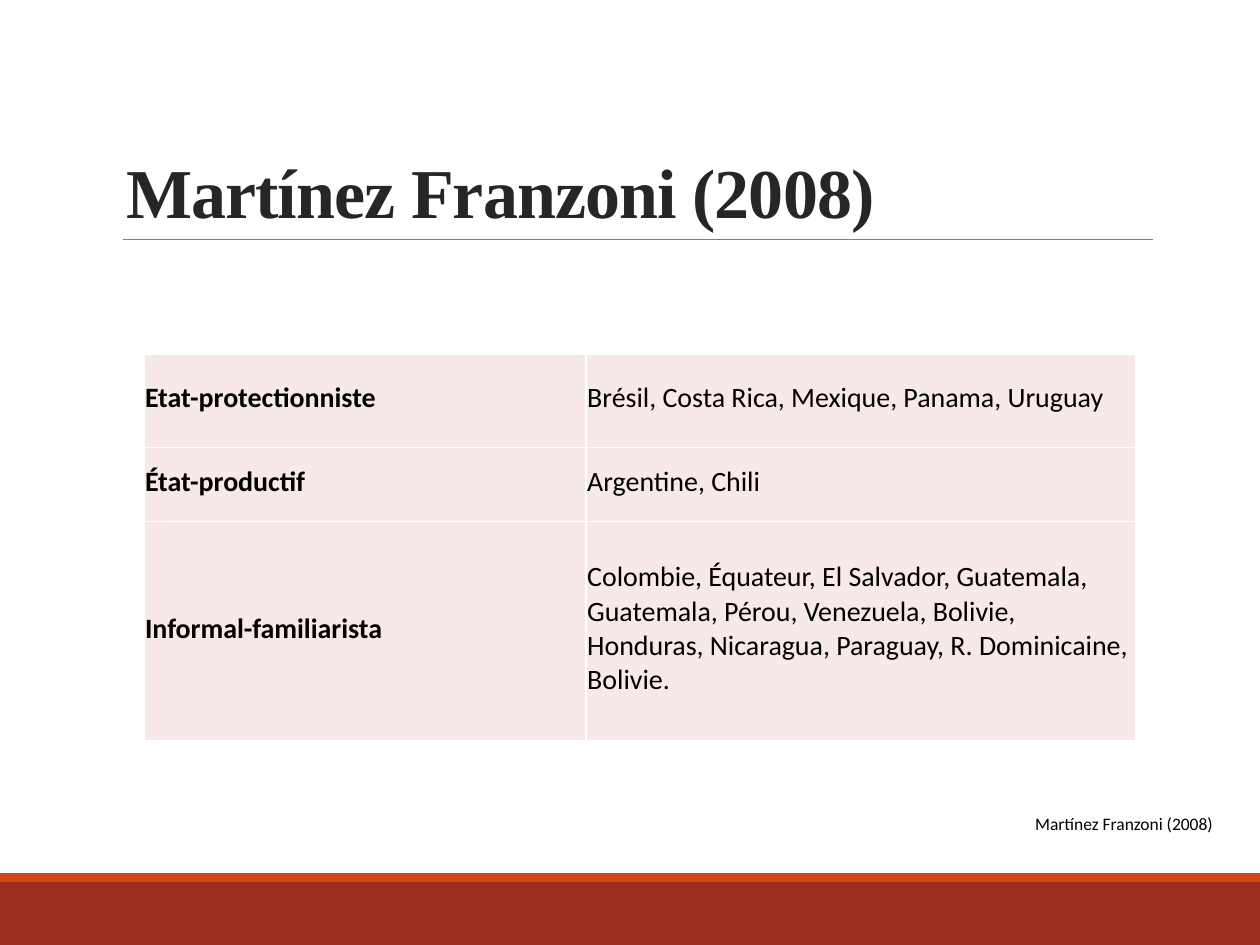
import pptx
import pptx.dml.color
import pptx.enum.shapes
import pptx.enum.text
import pptx.oxml
import pptx.oxml.ns
import pptx.util

Pt = pptx.util.Pt
ANCHOR = pptx.enum.text.MSO_ANCHOR
ALIGN = pptx.enum.text.PP_ALIGN
SHAPES = pptx.enum.shapes

TITLE = "Martínez Franzoni (2008)"
SOURCE = "Martínez Franzoni (2008)"
REGIMES = [
    ("Etat-protectionniste", "Brésil, Costa Rica, Mexique, Panama, Uruguay"),
    ("État-productif", "Argentine, Chili"),
    ("Informal-familiarista",
     "Colombie, Équateur, El Salvador, Guatemala, Guatemala, Pérou, Venezuela, "
     "Bolivie, Honduras, Nicaragua, Paraguay, R. Dominicaine, Bolivie."),
]
BANDS = [(504, 36, "9B2D1F"), (499, 5, "D34817")]
COL_WIDTHS = [252.7, 313.9]
ROW_HEIGHTS = [53.3, 42.5, 125.3]
SLIDE_W, SLIDE_H = 720, 540


def color(hex_code):
    return pptx.dml.color.RGBColor.from_string(hex_code)


def box(left, top, width, height):
    return Pt(left), Pt(top), Pt(width), Pt(height)


def style_text(tf, font, size, hex_code, bold=False):
    for p in tf.paragraphs:
        for r in p.runs:
            r.font.name = font
            r.font.size = Pt(size)
            r.font.bold = bold
            r.font.color.rgb = color(hex_code)


def set_borders(cell, hex_code, width):
    tc_pr = cell._tc.get_or_add_tcPr()
    for i, side in enumerate(("lnL", "lnR", "lnT", "lnB")):
        tc_pr.insert(i, pptx.oxml.parse_xml(
            f'<a:{side} {pptx.oxml.ns.nsdecls("a")} w="{Pt(width)}"><a:solidFill>'
            f'<a:srgbClr val="{hex_code}"/></a:solidFill></a:{side}>'))


def add_bands(s):
    for top, height, fill in BANDS:
        sp = s.shapes.add_shape(SHAPES.MSO_SHAPE.RECTANGLE, *box(0, top, SLIDE_W, height))
        sp.shadow.inherit = False
        sp.fill.solid()
        sp.fill.fore_color.rgb = color(fill)
        sp.line.fill.background()


def add_rule(s):
    rule = s.shapes.add_connector(
        SHAPES.MSO_CONNECTOR.STRAIGHT, Pt(70.5), Pt(136.8), Pt(658.8), Pt(136.8))
    rule.line.color.rgb = color("808080")
    rule.line.width = Pt(0.5)
    rule._element.spPr.append(
        pptx.oxml.parse_xml(f'<a:effectLst {pptx.oxml.ns.nsdecls("a")}/>'))


def format_title(s):
    title = s.shapes.title
    title.left, title.top, title.width, title.height = box(64.8, 22.3, 594, 114.5)
    tf = title.text_frame
    tf.text = TITLE
    tf.word_wrap = True
    tf.vertical_anchor = ANCHOR.BOTTOM
    p = tf.paragraphs[0]
    p.alignment = ALIGN.LEFT
    p.line_spacing = 0.85
    style_text(tf, "Times New Roman", 40, "262626", True)
    p.runs[0].font._element.set("spc", "-50")


def add_regimes(s):
    frame = s.shapes.add_table(
        len(REGIMES), len(COL_WIDTHS),
        *box(82.2, 202.3, sum(COL_WIDTHS), sum(ROW_HEIGHTS)))
    table = frame.table
    table.first_row = table.horz_banding = False
    for column, width in zip(table.columns, COL_WIDTHS):
        column.width = Pt(width)
    for row, height, texts in zip(table.rows, ROW_HEIGHTS, REGIMES):
        row.height = Pt(height)
        for i, (cell, text) in enumerate(zip(row.cells, texts)):
            cell.text_frame.text = text
            style_text(cell.text_frame, "Calibri", 16, "000000", i == 0)
            cell.vertical_anchor = ANCHOR.MIDDLE
            cell.margin_left = cell.margin_right = cell.margin_top = Pt(0.7)
            cell.margin_bottom = Pt(3.6)
            cell.fill.solid()
            cell.fill.fore_color.rgb = color("F7E9E8")
            set_borders(cell, "FFFFFF", 1)


def add_source(s):
    tf = s.shapes.add_textbox(*box(530, 460.8, 170, 19.4)).text_frame
    tf.word_wrap = True
    tf.auto_size = pptx.enum.text.MSO_AUTO_SIZE.SHAPE_TO_FIT_TEXT
    tf.text = SOURCE
    tf.paragraphs[0].alignment = ALIGN.RIGHT
    style_text(tf, "Calibri", 10, "000000")


def main():
    prs = pptx.Presentation()
    prs.slide_width, prs.slide_height = Pt(SLIDE_W), Pt(SLIDE_H)
    s = prs.slides.add_slide(prs.slide_layouts[5])
    add_bands(s)
    add_rule(s)
    format_title(s)
    add_regimes(s)
    add_source(s)
    prs.save("out.pptx")


if __name__ == "__main__":
    main()
